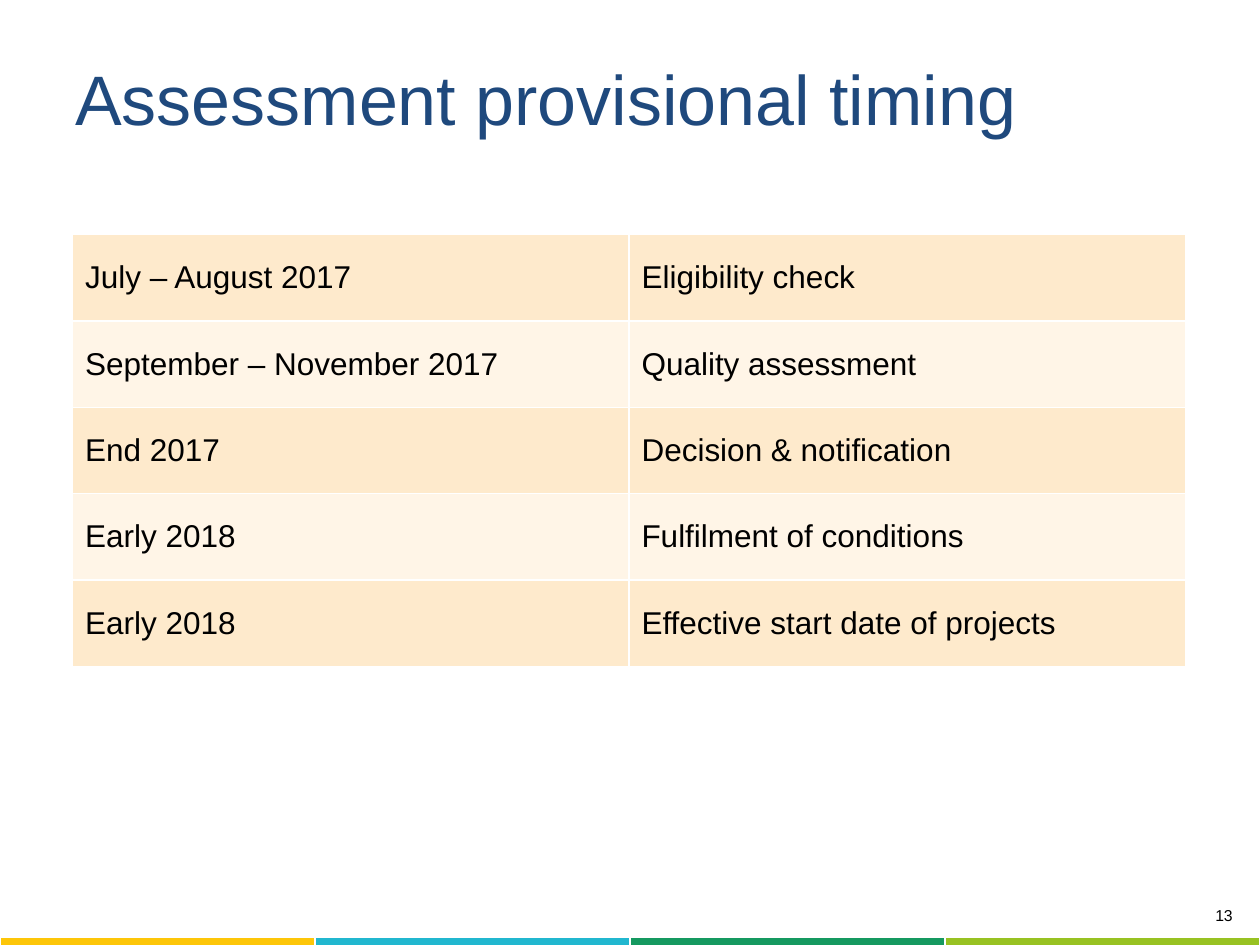
from dataclasses import dataclass
from pptx import Presentation
from pptx.dml.color import RGBColor
from pptx.enum.text import MSO_ANCHOR, PP_ALIGN
from pptx.oxml import parse_xml
from pptx.oxml.ns import nsdecls
from pptx.util import Pt


@dataclass(frozen=True)
class Theme:
    font: str = "Arial"
    title: str = "1F497D"
    text: str = "000000"
    line: str = "FFFFFF"
    bands: tuple = ("FEEACC", "FFF5E7")
    strip: tuple = ("FDC609", "21B7CF", "159960", "98C222")
    head: int = 40
    body: int = 18
    small: int = 9


THEME = Theme()
STAGES = [
    ("July – August 2017", "Eligibility check"),
    ("September – November 2017", "Quality assessment"),
    ("End 2017", "Decision & notification"),
    ("Early 2018", "Fulfilment of conditions"),
    ("Early 2018", "Effective start date of projects"),
]


def style(para, size, color):
    para.font.name = THEME.font
    para.font.size = Pt(size)
    para.font.color.rgb = RGBColor.from_string(color)


def paint(cell, color):
    cell.fill.solid()
    cell.fill.fore_color.rgb = RGBColor.from_string(color)


def edge(cell):
    props = cell._tc.get_or_add_tcPr()
    for side in "LRTB":
        props.append(parse_xml(
            f'<a:ln{side} {nsdecls("a")} w="{Pt(1)}"><a:solidFill>'
            f'<a:srgbClr val="{THEME.line}"/></a:solidFill></a:ln{side}>'))


def grid(slide, box, rows, cols):
    left, top, width, height = map(Pt, box)
    table = slide.shapes.add_table(rows, cols, left, top, width, height).table
    table.first_row = table.horz_banding = False
    return table


def label(slide, box, text, size, color, align, anchor):
    frame = slide.shapes.add_textbox(*map(Pt, box)).text_frame
    frame.word_wrap = True
    frame.vertical_anchor = anchor
    para = frame.paragraphs[0]
    para.text = text
    para.alignment = align
    style(para, size, color)


def strip(slide, box):
    table = grid(slide, box, 1, len(THEME.strip))
    for cell, color in zip(table.iter_cells(), THEME.strip):
        cell.margin_top = cell.margin_bottom = 0
        style(cell.text_frame.paragraphs[0], 1, THEME.text)
        paint(cell, color)


def timing(slide, box):
    table = grid(slide, box, len(STAGES), 2)
    for row, stage in enumerate(STAGES):
        for col, text in enumerate(stage):
            cell = table.cell(row, col)
            cell.text = text
            cell.vertical_anchor = MSO_ANCHOR.MIDDLE
            style(cell.text_frame.paragraphs[0], THEME.body, THEME.text)
            edge(cell)
            paint(cell, THEME.bands[row % 2])


def main():
    deck = Presentation()
    deck.slide_width, deck.slide_height = Pt(720), Pt(540)
    slide = deck.slides.add_slide(deck.slide_layouts[6])
    strip(slide, (0, 535.7, 720, 12))
    label(slide, (569.5, 514, 142, 22), "13", THEME.small, THEME.text,
          PP_ALIGN.RIGHT, MSO_ANCHOR.TOP)
    label(slide, (36, 34, 648, 44), "Assessment provisional timing",
          THEME.head, THEME.title, PP_ALIGN.LEFT, MSO_ANCHOR.MIDDLE)
    timing(slide, (41.4, 134, 636, 247))
    deck.save("out.pptx")


if __name__ == "__main__":
    main()
